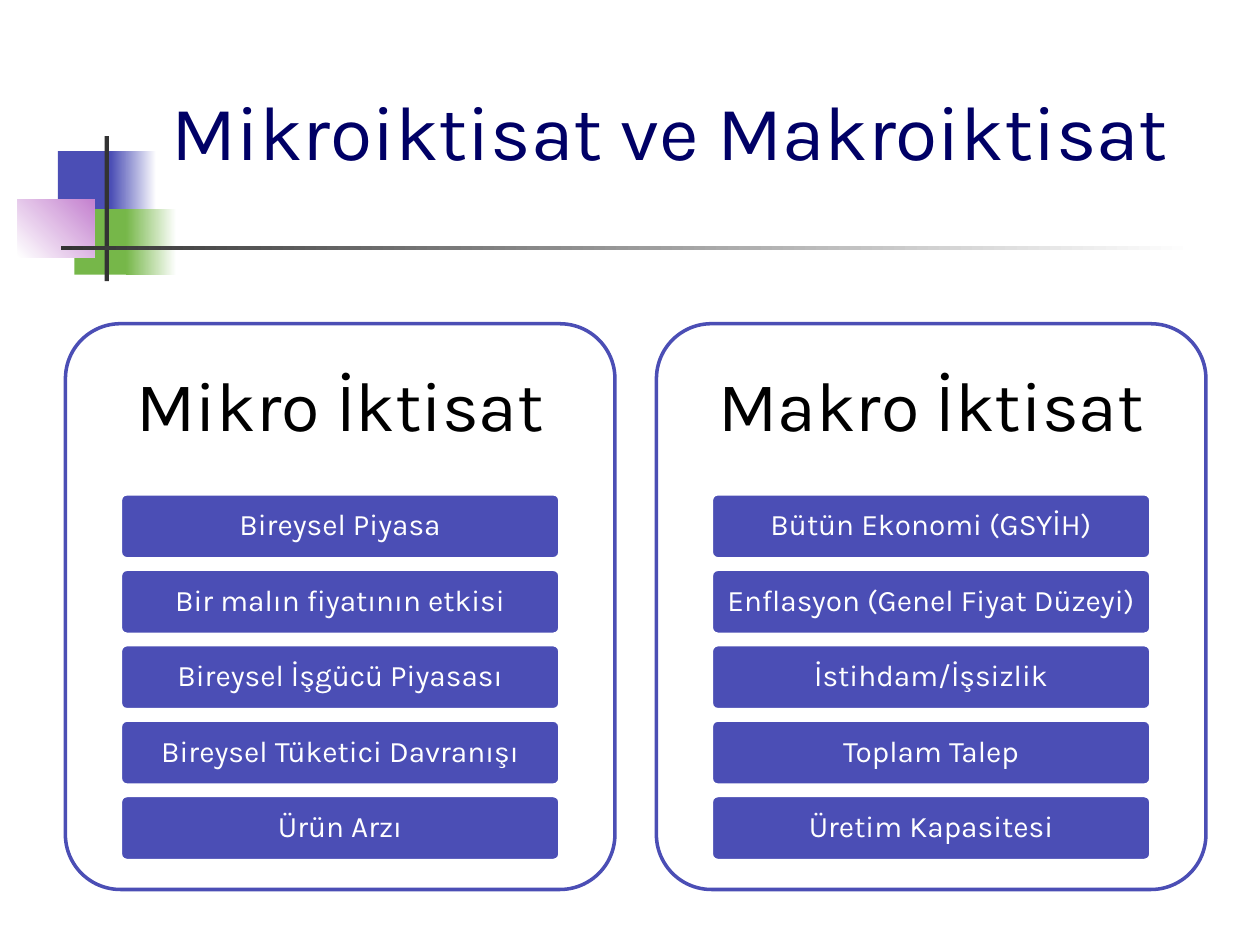
"""Build a slide that compares microeconomics and macroeconomics in two panels."""
import pptx
import pptx.dml.color
import pptx.enum.shapes
import pptx.enum.text
from pptx.util import Pt

BLUE, GREEN, PINK, GREY, WHITE = "4B4EB5", "76B749", "C481CF", "333333", "FFFFFF"
RECTANGLE = pptx.enum.shapes.MSO_SHAPE.RECTANGLE
ROUNDED = pptx.enum.shapes.MSO_SHAPE.ROUNDED_RECTANGLE
MIDDLE = pptx.enum.text.MSO_ANCHOR.MIDDLE
LEFT, CENTER = pptx.enum.text.PP_ALIGN.LEFT, pptx.enum.text.PP_ALIGN.CENTER


def color(value):
    return pptx.dml.color.RGBColor.from_string(value)


def write(box, text, size, text_color, align, margin_x, margin_y):
    frame = box.text_frame
    frame.word_wrap = True
    frame.vertical_anchor = MIDDLE
    frame.margin_left = frame.margin_right = Pt(margin_x)
    frame.margin_top = frame.margin_bottom = Pt(margin_y)
    para = frame.paragraphs[0]
    para.text = text
    para.alignment = align
    para.font.name = "Karla"
    para.font.size = Pt(size)
    para.font.color.rgb = color(text_color)
    return para


deck = pptx.Presentation()
deck.slide_width, deck.slide_height = Pt(720), Pt(540)
page = deck.slides.add_slide(deck.slide_layouts[5])
shapes = page.shapes

decorations = [
    (33.1, 86.4, 34.6, 37.4, [BLUE], 0),
    (63.4, 86.4, 25.9, 37.4, [BLUE, WHITE], 0),
    (42.5, 119.5, 33.1, 37.4, [GREEN], 0),
    (72, 119.5, 28.8, 37.4, [GREEN, WHITE], 0),
    (10.1, 113.8, 43.9, 33.1, [WHITE, PINK], 45),
    (59.8, 77.8, 2.5, 82.8, [GREY], 0),
    (34.6, 140.4, 648, 2.5, [GREY, WHITE], 0),
]
for left, top, width, height, colors, angle in decorations:
    block = shapes.add_shape(RECTANGLE, Pt(left), Pt(top), Pt(width), Pt(height))
    block.shadow.inherit = False
    block.line.fill.background()
    if len(colors) == 1:
        block.fill.solid()
        block.fill.fore_color.rgb = color(colors[0])
    else:
        block.fill.gradient()
        block.fill.gradient_angle = angle
        for stop, stop_color in zip(block.fill.gradient_stops, colors):
            stop.color.rgb = color(stop_color)

title = shapes.title
title.left, title.top, title.width, title.height = Pt(90.7), Pt(16.6), Pt(613.4), Pt(115.2)
write(title, "Mikroiktisat ve Makroiktisat", 44, "000066", LEFT, 7.2, 3.6)

panels = [
    ("Mikro İktisat", ["Bireysel Piyasa", "Bir malın fiyatının etkisi", "Bireysel İşgücü Piyasası",
                       "Bireysel Tüketici Davranışı", "Ürün Arzı"]),
    ("Makro İktisat", ["Bütün Ekonomi (GSYİH)", "Enflasyon (Genel Fiyat Düzeyi)", "İstihdam/İşsizlik",
                       "Toplam Talep", "Üretim Kapasitesi"]),
]
panel_top, panel_width, panel_height, panel_step = 185, 314, 323.3, 337.7
heading_height, bar_width, bar_height, bar_step = 97.2, 251.2, 37.2, 43.1

for column, (heading, topics) in enumerate(panels):
    left = 37.4 + column * panel_step
    panel = shapes.add_shape(ROUNDED, Pt(left), Pt(panel_top), Pt(panel_width), Pt(panel_height))
    panel.adjustments[0] = 0.1
    panel.shadow.inherit = False
    panel.fill.solid()
    panel.fill.fore_color.rgb = color(WHITE)
    panel.line.color.rgb = color(BLUE)
    panel.line.width = Pt(2)

    box = shapes.add_textbox(Pt(left), Pt(panel_top), Pt(panel_width), Pt(heading_height))
    write(box, heading, 40, "000000", CENTER, 12, 12).line_spacing = 0.9

    bar_left = left + (panel_width - bar_width) / 2
    for row, topic in enumerate(topics):
        bar_top = panel_top + heading_height + row * bar_step
        bar = shapes.add_shape(ROUNDED, Pt(bar_left), Pt(bar_top), Pt(bar_width), Pt(bar_height))
        bar.adjustments[0] = 0.1
        bar.shadow.inherit = False
        bar.fill.solid()
        bar.fill.fore_color.rgb = color(BLUE)
        bar.line.color.rgb = color(WHITE)
        bar.line.width = Pt(2)
        write(bar, topic, 17, WHITE, CENTER, 3.6, 2.9).line_spacing = 0.9

deck.save("out.pptx")
